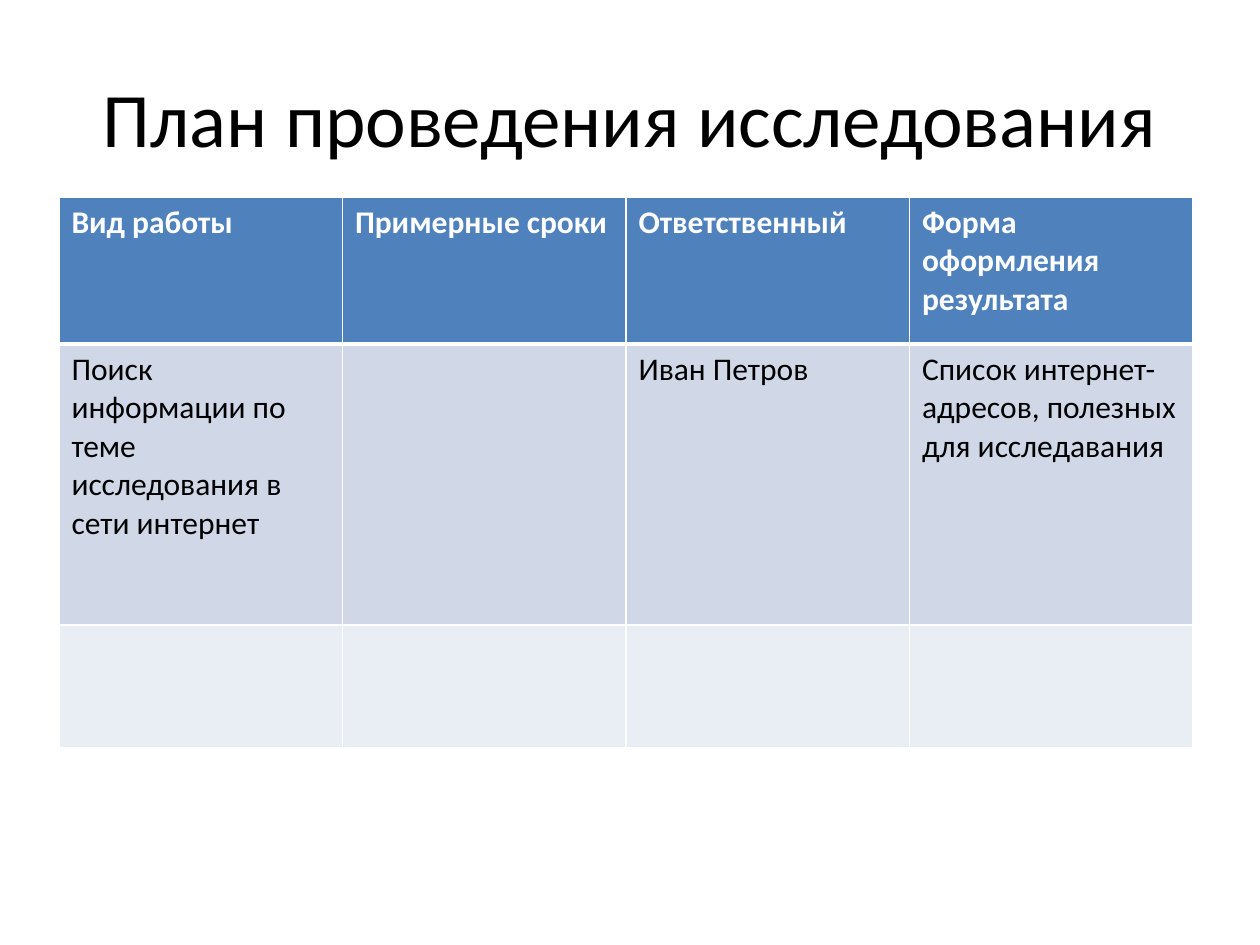
from dataclasses import dataclass

from lxml.etree import SubElement
from pptx import Presentation
from pptx.dml.color import RGBColor as Rgb
from pptx.enum.text import MSO_ANCHOR as Anchor, PP_ALIGN as Align
from pptx.oxml.ns import qn
from pptx.util import Emu, Pt

EMU_PER_PX = 914400 / 126


@dataclass(frozen=True)
class Theme:
    font: str = "Calibri"
    title_size: int = 44
    cell_size: int = 18
    ink: str = "000000"
    paper: str = "FFFFFF"
    header: str = "4F81BD"
    bands: tuple = ("D0D8E8", "E9EDF4")
    rule: int = 1
    header_rule: int = 3


THEME = Theme()

PLAN = [
    ["Вид работы", "Примерные сроки", "Ответственный", "Форма оформления результата"],
    ["Поиск информации по теме исследования в сети интернет", "", "Иван Петров",
     "Список интернет-адресов, полезных для исследавания"],
    ["", "", "", ""],
]
ROW_HEIGHTS = [147, 281, 123]


def px(length):
    return Emu(round(length * EMU_PER_PX))


def write(frame, text, size, color, bold=False, align=Align.LEFT):
    paragraph = frame.paragraphs[0]
    paragraph.alignment = align
    # An empty cell keeps its type size on the paragraph
    target = paragraph
    if text:
        target = paragraph.add_run()
        target.text = text
    formats = {"name": THEME.font, "size": Pt(size), "bold": bold}
    for key, value in formats.items():
        setattr(target.font, key, value)
    target.font.color.rgb = Rgb.from_string(color)


def add_title(slide, text, left, top, width, height):
    heading = slide.shapes.add_textbox(px(left), px(top), px(width), px(height))
    frame = heading.text_frame
    frame.word_wrap = True
    frame.vertical_anchor = Anchor.MIDDLE
    write(frame, text, THEME.title_size, THEME.ink, align=Align.CENTER)


def rule_cell(cell, widths):
    properties = cell._tc.get_or_add_tcPr()
    for side, width in widths.items():
        line = SubElement(properties, qn(f"a:ln{side}"), w=str(Pt(width)))
        fill = SubElement(line, qn("a:solidFill"))
        SubElement(fill, qn("a:srgbClr"), val=THEME.paper)


def style_cell(cell, text, row):
    is_header = row == 0
    rule_cell(cell, {
        "L": THEME.rule,
        "R": THEME.rule,
        "T": THEME.header_rule if row == 1 else THEME.rule,
        "B": THEME.header_rule if is_header else THEME.rule,
    })
    cell.fill.solid()
    band = THEME.header if is_header else THEME.bands[(row - 1) % 2]
    cell.fill.fore_color.rgb = Rgb.from_string(band)
    write(cell.text_frame, text, THEME.cell_size,
          THEME.paper if is_header else THEME.ink, bold=is_header)


def add_plan(slide, rows, heights, left, top, width):
    plan = slide.shapes.add_table(len(rows), len(rows[0]), px(left), px(top),
                                  px(width), px(sum(heights))).table
    for row, (texts, height) in enumerate(zip(rows, heights)):
        plan.rows[row].height = px(height)
        for column, text in enumerate(texts):
            style_cell(plan.cell(row, column), text, row)


def main():
    deck = Presentation()
    deck.slide_width, deck.slide_height = px(1260), px(945)
    slide = deck.slides.add_slide(deck.slide_layouts[6])

    # Heading
    add_title(slide, "План проведения исследования", 63, 38, 1134, 157)
    # Research plan
    add_plan(slide, PLAN, ROW_HEIGHTS, 59, 197, 1134)

    deck.save("out.pptx")


if __name__ == "__main__":
    main()
